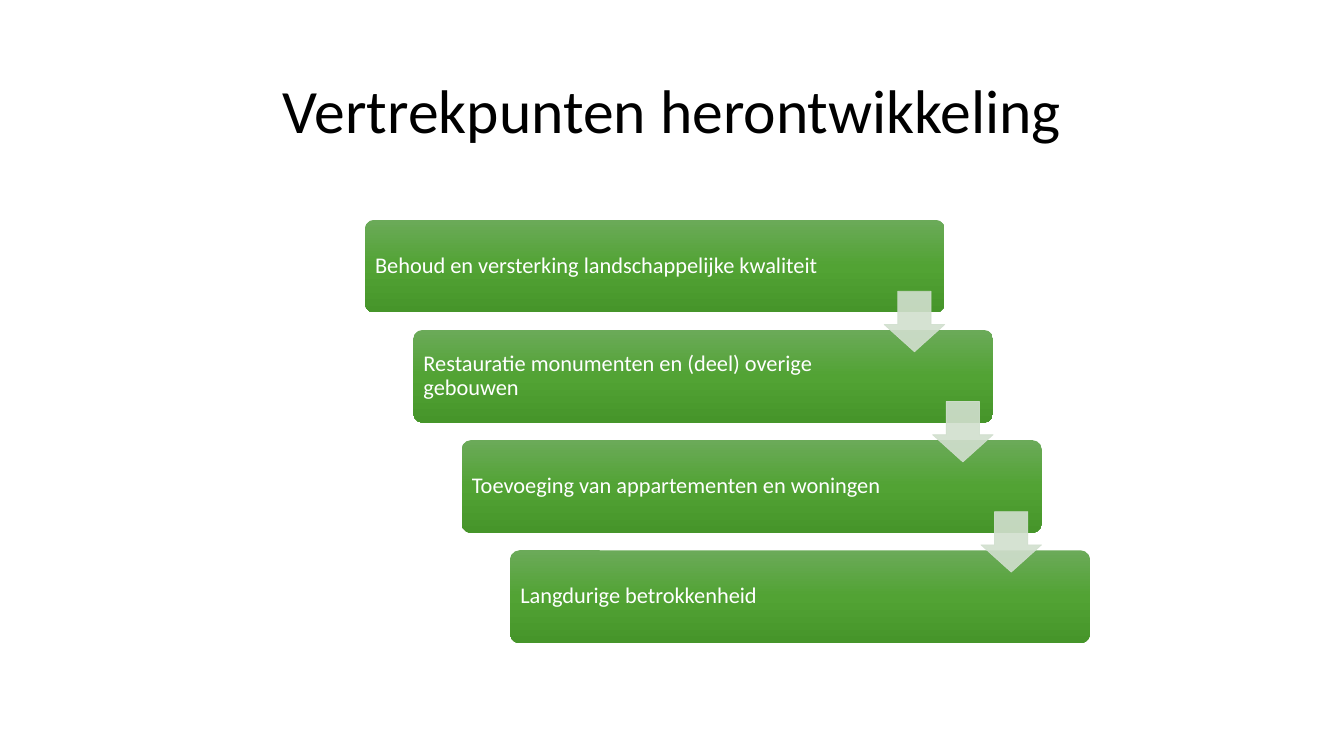
"""Build the slide with the staircase of starting points for redevelopment."""
from copy import deepcopy

from lxml import etree
from pptx import Presentation
from pptx.dml.color import RGBColor
from pptx.enum.shapes import MSO_SHAPE
from pptx.enum.text import MSO_ANCHOR, PP_ALIGN
from pptx.oxml.ns import qn
from pptx.util import Inches, Pt

ROUNDED = MSO_SHAPE.ROUNDED_RECTANGLE
DOWN_ARROW = MSO_SHAPE.DOWN_ARROW
MIDDLE = MSO_ANCHOR.MIDDLE
LEFT, CENTER = PP_ALIGN.LEFT, PP_ALIGN.CENTER

FONT = "Calibri"
BLACK, WHITE, ARROW_COLOR = "000000", "FFFFFF", "D1DFCE"
GREENS = ("6BAA59", "52A334", "46952A")

STEPS = (
    "Behoud en versterking landschappelijke kwaliteit",
    "Restauratie monumenten en (deel) overige gebouwen",
    "Toevoeging van appartementen en woningen",
    "Langdurige betrokkenheid",
)
STEP_LEFT, STEP_TOP = 3.62, 2.18
STEP_WIDTH, STEP_HEIGHT = 5.75, 0.92
SHIFT_RIGHT, SHIFT_DOWN = 0.48, 1.093
LABEL_INSET, ARROW_SIZE, ARROW_DROP = 0.03, 0.6, 0.71


def color(hex_string):
    """Return the colour for a hex string."""
    return RGBColor.from_string(hex_string)


def add_text(slide, text, left, top, width, height, *, size, font_color,
             align=LEFT, side_inset=0.07, end_inset=0.07):
    """Add a wrapped, vertically centred text box."""
    box = slide.shapes.add_textbox(
        Inches(left), Inches(top), Inches(width), Inches(height))
    frame = box.text_frame
    frame.word_wrap = True
    frame.vertical_anchor = MIDDLE
    frame.margin_left = frame.margin_right = Inches(side_inset)
    frame.margin_top = frame.margin_bottom = Inches(end_inset)
    paragraph = frame.paragraphs[0]
    paragraph.alignment = align
    paragraph.line_spacing = 0.9
    run = paragraph.add_run()
    run.text = text
    run.font.name = FONT
    run.font.size = Pt(size)
    run.font.color.rgb = color(font_color)


def add_plain_shape(slide, preset, left, top, width, height, adjustments):
    """Add a preset shape without shadow."""
    shape = slide.shapes.add_shape(
        preset, Inches(left), Inches(top), Inches(width), Inches(height))
    shape.shadow.inherit = False
    for index, value in enumerate(adjustments):
        shape.adjustments[index] = value
    return shape


def fill_gradient(shape, hex_colors):
    """Fill a shape from top to bottom with three evenly spaced colours."""
    shape.fill.gradient()
    shape.fill.gradient_angle = 270
    stop_list = shape._element.spPr.find(qn("a:gradFill")).find(qn("a:gsLst"))
    stop_list.insert(1, deepcopy(stop_list[0]))
    for index, stop in enumerate(shape.fill.gradient_stops):
        stop.color.rgb = color(hex_colors[index])
        stop.position = index / 2


def set_opacity(shape, percent):
    """Make the solid fill and line of a shape partly transparent."""
    for element in shape._element.spPr.iter(qn("a:srgbClr")):
        etree.SubElement(element, qn("a:alpha"), val=str(percent * 1000))


def add_step(slide, text, left, top):
    """Add a green step with its label."""
    bar = add_plain_shape(
        slide, ROUNDED, left, top, STEP_WIDTH, STEP_HEIGHT, [0.1])
    fill_gradient(bar, GREENS)
    bar.line.fill.background()
    add_text(slide, text, left + LABEL_INSET, top + LABEL_INSET, 4.62,
             STEP_HEIGHT - 2 * LABEL_INSET, size=16, font_color=WHITE)


def add_arrow(slide, left, top):
    """Add a pale arrow that leads to the next step."""
    arrow = add_plain_shape(
        slide, DOWN_ARROW, left, top, ARROW_SIZE, ARROW_SIZE, [0.45, 0.55])
    arrow.adjustments[0], arrow.adjustments[1] = 0.55, 0.45
    arrow.fill.solid()
    arrow.fill.fore_color.rgb = color(ARROW_COLOR)
    arrow.line.color.rgb = color(ARROW_COLOR)
    arrow.line.width = Pt(0.5)
    set_opacity(arrow, 90)


def main():
    """Build and save the presentation."""
    presentation = Presentation()
    presentation.slide_width = Inches(13.33)
    presentation.slide_height = Inches(7.5)
    slide = presentation.slides.add_slide(presentation.slide_layouts[6])
    add_text(slide, "Vertrekpunten herontwikkeling", 0.92, 0.4, 11.5, 1.45,
             size=44, font_color=BLACK, align=CENTER, end_inset=0.04)
    corners = [(STEP_LEFT + index * SHIFT_RIGHT, STEP_TOP + index * SHIFT_DOWN)
               for index in range(len(STEPS))]
    for text, (left, top) in zip(STEPS, corners):
        add_step(slide, text, left, top)
    for left, top in corners[:-1]:
        add_arrow(slide, left + STEP_WIDTH - ARROW_SIZE, top + ARROW_DROP)
    presentation.save("out.pptx")


if __name__ == "__main__":
    main()
